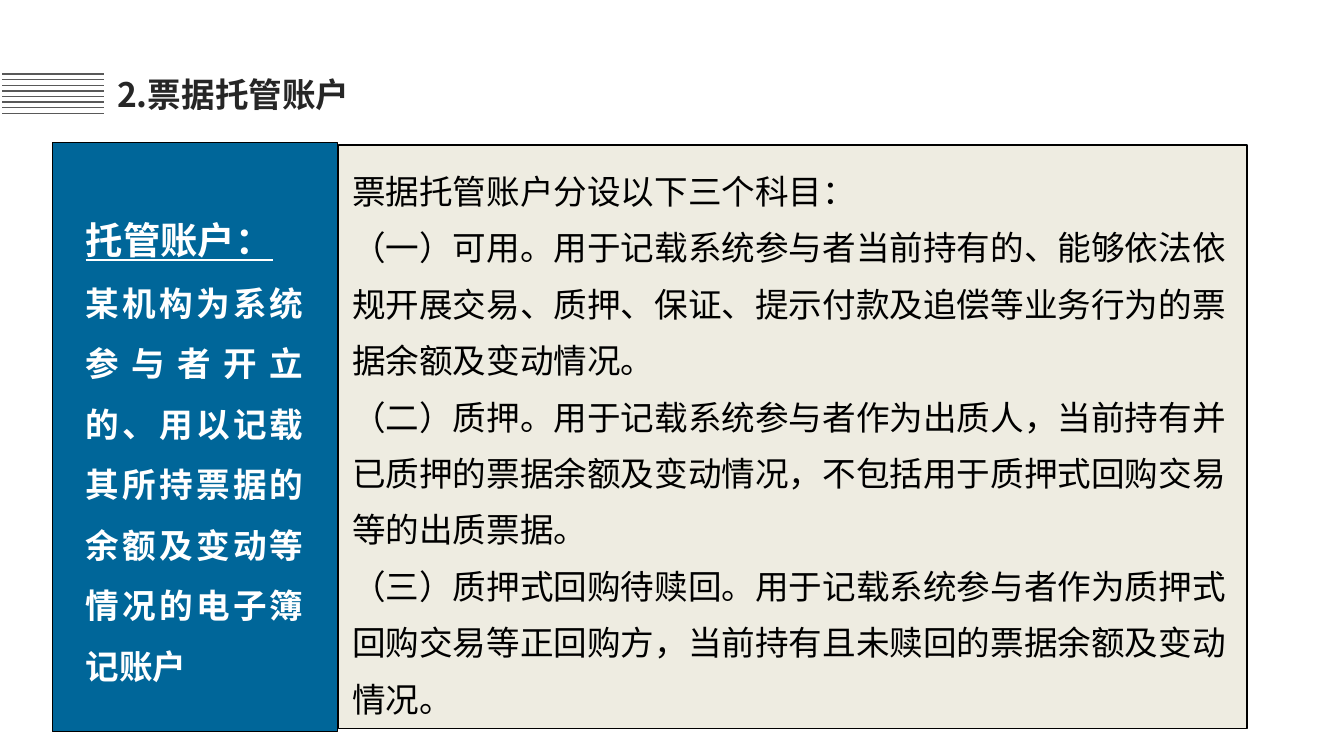
"""Build the slide that explains the bill custody account and its three subjects."""
from dataclasses import dataclass

from lxml import etree
from pptx import Presentation
from pptx import util as u
from pptx.dml.color import RGBColor
from pptx.enum import shapes, text
from pptx.oxml.ns import qn

FONT = "Noto Sans CJK SC"
COLORS = {
    "rule": "595959",
    "title": "262626",
    "panel": "EEECE1",
    "accent": "006699",
    "ink": "000000",
    "paper": "FFFFFF",
}
SUBJECTS = [
    "票据托管账户分设以下三个科目：",
    "（一）可用。用于记载系统参与者当前持有的、能够依法依规开展交易、质押、保证、提示付款及追偿等业务行为的票据余额及变动情况。",
    "（二）质押。用于记载系统参与者作为出质人，当前持有并已质押的票据余额及变动情况，不包括用于质押式回购交易等的出质票据。",
    "（三）质押式回购待赎回。用于记载系统参与者作为质押式回购交易等正回购方，当前持有且未赎回的票据余额及变动情况。",
]
DEFINITION = "某机构为系统参与者开立的、用以记载其所持票据的余额及变动等情况的电子簿记账户"


@dataclass
class Area:
    """A rectangle on the slide, in centimetres."""

    left: float
    top: float
    width: float
    height: float

    def lengths(self) -> list[u.Cm]:
        """Return the four lengths in the order python-pptx takes them."""
        return [u.Cm(value) for value in (self.left, self.top, self.width, self.height)]


@dataclass
class Rule:
    """A horizontal line, in centimetres."""

    left: float
    right: float
    height: float


TITLE = Area(1.96, 1.27, 8.53, 1.07)
PANEL = Area(6.4, 2.74, 17.17, 11.02)
SIDEBAR = Area(0.99, 2.69, 5.39, 11.13)
SIDEBAR_TEXT = Area(1.37, 3.56, 4.62, 9.63)
RULES = [Rule(0.04, 1.96, 1.4 + 0.74 * step / 7) for step in range(8)]


def color(name: str) -> RGBColor:
    """Look up a colour by its role."""
    return RGBColor.from_string(COLORS[name])


def place(shape, area: Area) -> None:
    """Move and size a shape."""
    shape.left, shape.top, shape.width, shape.height = area.lengths()


def outline(shape, fill: str) -> None:
    """Fill a shape and give it a thin dark border."""
    shape.fill.solid()
    shape.fill.fore_color.rgb = color(fill)
    shape.line.color.rgb = color("ink")
    shape.line.width = u.Pt(0.75)


def prepare(frame, anchor=text.MSO_ANCHOR.TOP) -> None:
    """Make a text frame wrap at a fixed size."""
    frame.word_wrap = True
    frame.auto_size = text.MSO_AUTO_SIZE.NONE
    frame.vertical_anchor = anchor


def write(para, words: str, *, ink: str, size: float = 18, bold: bool = False,
          underline: bool = False, spacing: float = 1.0,
          align=text.PP_ALIGN.LEFT) -> None:
    """Write one formatted paragraph without a bullet or hanging punctuation."""
    para.alignment = align
    para.line_spacing = spacing
    para.space_before = para.space_after = u.Pt(0)
    properties = para._p.get_or_add_pPr()
    for name in ("marL", "indent", "hangingPunct"):
        properties.set(name, "0")
    etree.SubElement(properties, qn("a:buNone"))
    span = para.add_run()
    span.text = words
    span.font.name = FONT
    span.font.size = u.Pt(size)
    span.font.bold = bold
    span.font.underline = underline
    span.font.color.rgb = color(ink)
    etree.SubElement(span._r.get_or_add_rPr(), qn("a:ea"), typeface=FONT)


def draw_rule(slide, rule: Rule) -> None:
    """Draw one line of the title ornament."""
    line = slide.shapes.add_connector(
        shapes.MSO_CONNECTOR.STRAIGHT,
        u.Cm(rule.left), u.Cm(rule.height), u.Cm(rule.right), u.Cm(rule.height))
    line.line.color.rgb = color("rule")
    line.line.width = u.Pt(0.75)
    etree.SubElement(line._element.spPr, qn("a:effectLst"))


def draw_title(slide) -> None:
    """Fill the title placeholder and draw its ornament."""
    title = slide.shapes.title
    place(title, TITLE)
    prepare(title.text_frame)
    write(title.text_frame.paragraphs[0], "2.票据托管账户", ink="title", bold=True)
    for rule in RULES:
        draw_rule(slide, rule)


def draw_subjects(slide) -> None:
    """Fill the body placeholder with the list of subjects."""
    body = slide.placeholders[1]
    place(body, PANEL)
    outline(body, "panel")
    frame = body.text_frame
    prepare(frame, text.MSO_ANCHOR.MIDDLE)
    for index, words in enumerate(SUBJECTS):
        para = frame.add_paragraph() if index else frame.paragraphs[0]
        write(para, words, ink="ink", spacing=1.4)


def draw_sidebar(slide) -> None:
    """Draw the coloured panel with the definition."""
    panel = slide.shapes.add_shape(shapes.MSO_SHAPE.RECTANGLE, *SIDEBAR.lengths())
    panel.shadow.inherit = False
    outline(panel, "accent")
    box = slide.shapes.add_textbox(*SIDEBAR_TEXT.lengths())
    frame = box.text_frame
    prepare(frame)
    style = {"ink": "paper", "bold": True, "spacing": 1.5, "align": text.PP_ALIGN.JUSTIFY}
    write(frame.paragraphs[0], "托管账户：", size=20, underline=True, **style)
    write(frame.add_paragraph(), DEFINITION, **style)


def main() -> None:
    """Build and save the deck."""
    deck = Presentation()
    deck.slide_width, deck.slide_height = u.Cm(25.4), u.Cm(14.28)
    slide = deck.slides.add_slide(deck.slide_layouts[1])
    draw_title(slide)
    draw_subjects(slide)
    draw_sidebar(slide)
    deck.save("out.pptx")


if __name__ == "__main__":
    main()
